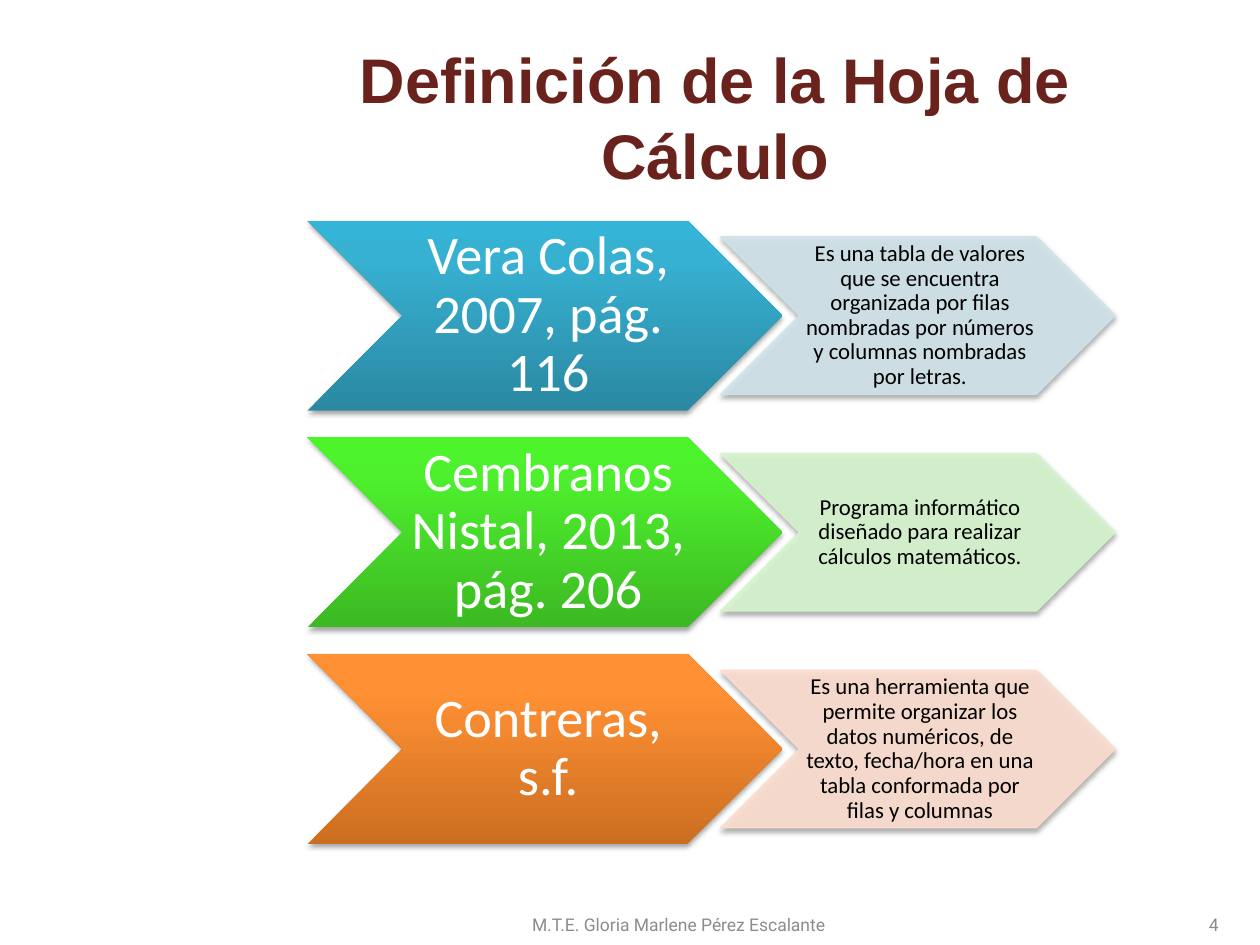
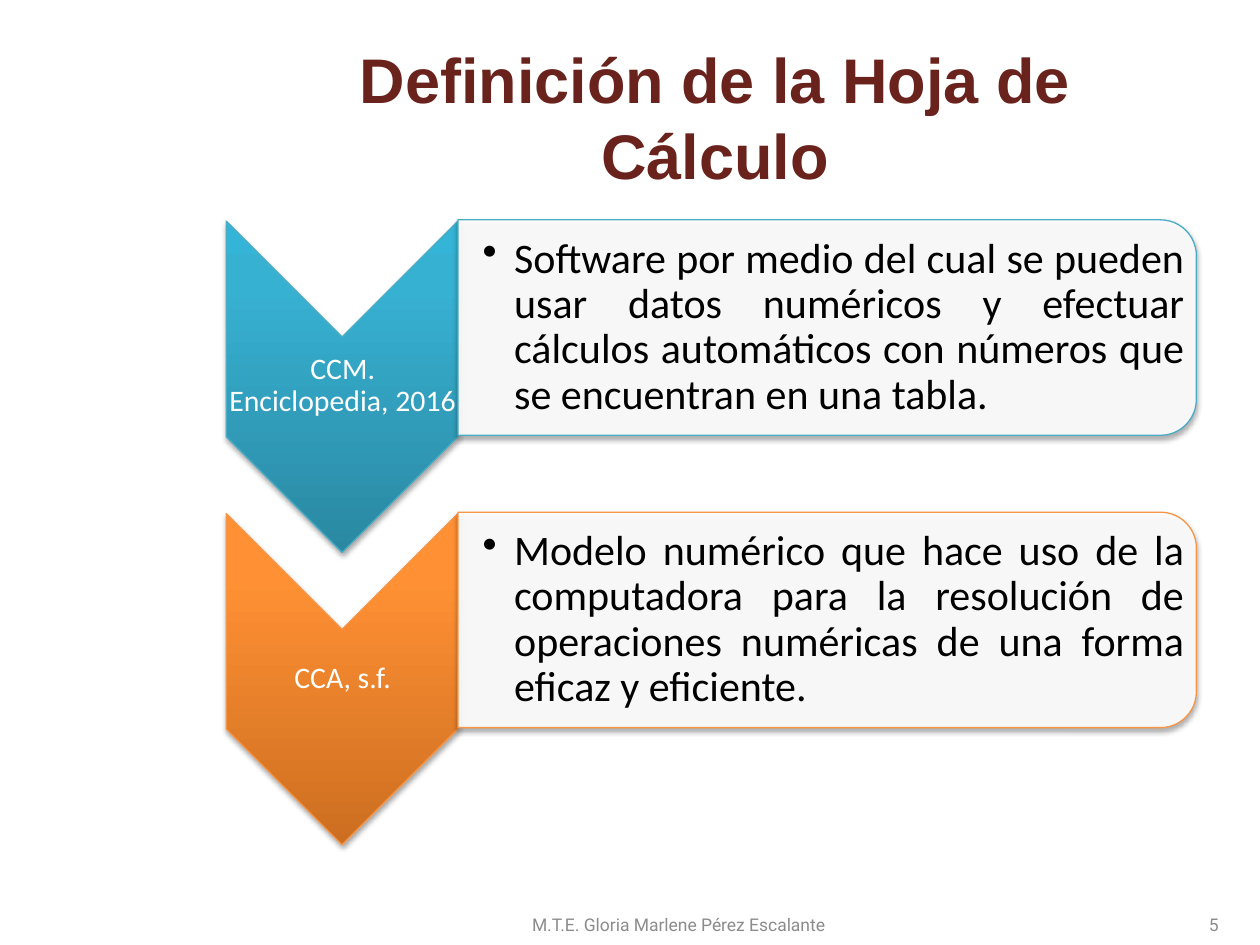
from lxml import etree
from pptx import Presentation
from pptx.dml.color import RGBColor
from pptx.enum.shapes import MSO_SHAPE as Shape
from pptx.enum.text import MSO_ANCHOR as Anchor, PP_ALIGN as Align
from pptx.oxml import parse_xml
from pptx.oxml.ns import nsdecls, qn
from pptx.util import Inches, Pt

# Shared look
TITLE = "Definición de la Hoja de Cálculo"
FOOTER = "M.T.E. Gloria Marlene Pérez Escalante"
MAROON, GRAY, WHITE, BLACK = "6A221D", "8C8C8C", "FFFFFF", "000000"
BLUE = ("2A88A2", "37B1D2", "34B4D6")
GREEN = ("3CB923", "4EF02E", "4CF52A")
ORANGE = ("CC6E20", "FF9034", "FF9136")
INSET = (0.1, 0.05, 0.1, 0.05)

# Slide content: gradient, tint or edge colour, source, definition
AUTHORS = [
    (BLUE, "D0E3EA", "Vera Colas, 2007, pág. 116",
     "Es una tabla de valores que se encuentra organizada por filas "
     "nombradas por números y columnas nombradas por letras."),
    (GREEN, "D6F4CE", "Cembranos Nistal, 2013, pág. 206",
     "Programa informático diseñado para realizar cálculos matemáticos."),
    (ORANGE, "FCDDCF", "Contreras, s.f.",
     "Es una herramienta que permite organizar los datos numéricos, de "
     "texto, fecha/hora en una tabla conformada por filas y columnas"),
]
SITES = [
    (BLUE, "4BACC6", "CCM. Enciclopedia, 2016",
     "Software por medio del cual se pueden usar datos numéricos y efectuar "
     "cálculos automáticos con números que se encuentran en una tabla."),
    (ORANGE, "F79646", "CCA, s.f.",
     "Modelo numérico que hace uso de la computadora para la resolución de "
     "operaciones numéricas de una forma eficaz y eficiente."),
]


def color(code):
    return RGBColor.from_string(code)


def add_bullet(par):
    props = par._p.get_or_add_pPr()
    props.set("marL", str(Inches(0.25)))
    props.set("indent", str(Inches(-0.25)))
    etree.SubElement(props, qn("a:buChar")).set("char", "•")


def add_text(slide, box, text, font, size, tint, align=Align.CENTER,
             inset=INSET, bold=False, space=None, bullet=False):
    frame = slide.shapes.add_textbox(*map(Inches, box)).text_frame
    frame.word_wrap = True
    frame.vertical_anchor = Anchor.MIDDLE
    (frame.margin_left, frame.margin_top,
     frame.margin_right, frame.margin_bottom) = map(Inches, inset)
    par = frame.paragraphs[0]
    par.alignment = align
    if space:
        par.line_spacing = space
    if bullet:
        add_bullet(par)
    run = par.add_run()
    run.text = text
    run.font.name, run.font.size, run.font.bold = font, Pt(size), bold
    run.font.color.rgb = color(tint)


def set_fade(shape, tones):
    """Dark at the foot, light at the top, whatever the rotation."""
    stops = "".join(
        f'<a:gs pos="{pos}"><a:srgbClr val="{tone}"/></a:gs>'
        for pos, tone in zip((0, 80000, 100000), tones))
    fade = parse_xml(
        f'<a:gradFill {nsdecls("a")} rotWithShape="0"><a:gsLst>{stops}</a:gsLst>'
        '<a:lin ang="16200000" scaled="0"/></a:gradFill>')
    shape._element.spPr.find(qn("a:prstGeom")).addnext(fade)


def set_alpha(part):
    for tone in part.iter(qn("a:srgbClr")):
        etree.SubElement(tone, qn("a:alpha")).set("val", "90000")


def add_shade(shape):
    shape.shadow.inherit = False
    shape._element.spPr.find(qn("a:effectLst")).append(parse_xml(
        f'<a:outerShdw {nsdecls("a")} blurRad="{Pt(3.1)}" dist="{Pt(1.8)}" '
        'dir="5400000" rotWithShape="0"><a:srgbClr val="000000">'
        '<a:alpha val="35000"/></a:srgbClr></a:outerShdw>'))


def add_block(slide, kind, box, fill, edge=None, turn=0, clear_edge=False):
    """A tuple fill is a gradient; a plain hex fill is slightly clear."""
    shape = slide.shapes.add_shape(kind, *map(Inches, box))
    shape.rotation = turn
    if isinstance(fill, tuple):
        set_fade(shape, fill)
    else:
        shape.fill.solid()
        shape.fill.fore_color.rgb = color(fill)
        set_alpha(shape._element.spPr.find(qn("a:solidFill")))
    if edge:
        shape.line.color.rgb = color(edge)
        shape.line.width = Pt(0.75)
        if clear_edge:
            set_alpha(shape._element.spPr.find(qn("a:ln")))
    else:
        shape.line.fill.background()
    add_shade(shape)


def add_page(deck, number):
    slide = deck.slides.add_slide(deck.slide_layouts[6])
    add_text(slide, (1.85, 0.3, 7.65, 1.25), TITLE, "Arial", 36, MAROON, bold=True)
    add_text(slide, (3.8, 7.14, 3.17, 0.4), FOOTER, "Roboto", 10, GRAY)
    add_text(slide, (7.44, 7.14, 2.33, 0.4), str(number), "Roboto", 10, GRAY,
             align=Align.RIGHT)
    return slide


def add_author(slide, top, tones, tint, name, words):
    add_block(slide, Shape.CHEVRON, (2.44, top, 3.77, 1.51), tones)
    add_text(slide, (3.2, top, 2.26, 1.51), name, "Calibri", 31, WHITE,
             inset=(0.04, 0.02, 0, 0.02), space=0.9)
    low = top + 0.13
    add_block(slide, Shape.CHEVRON, (5.72, low, 3.13, 1.25), tint, tint,
              clear_edge=True)
    add_text(slide, (6.35, low, 1.88, 1.25), words, "Calibri", 13, BLACK,
             inset=(0.02, 0.01, 0, 0.01), space=0.9)


def add_site(slide, top, tones, edge, name, words):
    # Boxes of turned shapes are given before the quarter turn
    add_block(slide, Shape.CHEVRON, (1.4, top + 0.4, 2.63, 1.84), tones, edge, 90)
    add_text(slide, (1.8, top + 0.92, 1.84, 0.79), name, "Calibri", 17, WHITE,
             inset=(0.01,) * 4, space=0.9)
    add_block(slide, Shape.ROUND_2_SAME_RECTANGLE,
              (5.71, top - 2.08, 1.71, 5.86), WHITE, edge, 90)
    add_text(slide, (3.64, top + 0.08, 5.78, 1.54), words, "Calibri", 24, BLACK,
             align=Align.JUSTIFY, inset=(0.19, 0.02, 0.02, 0.02), space=0.9,
             bullet=True)


def main():
    deck = Presentation()
    deck.slide_width, deck.slide_height = Inches(10), Inches(7.5)

    # Definitions by author
    slide = add_page(deck, 4)
    for row, entry in enumerate(AUTHORS):
        add_author(slide, 1.75 + 1.72 * row, *entry)

    # Definitions by site
    slide = add_page(deck, 5)
    for row, entry in enumerate(SITES):
        add_site(slide, 1.75 + 2.32 * row, *entry)

    deck.save("out.pptx")


if __name__ == "__main__":
    main()
